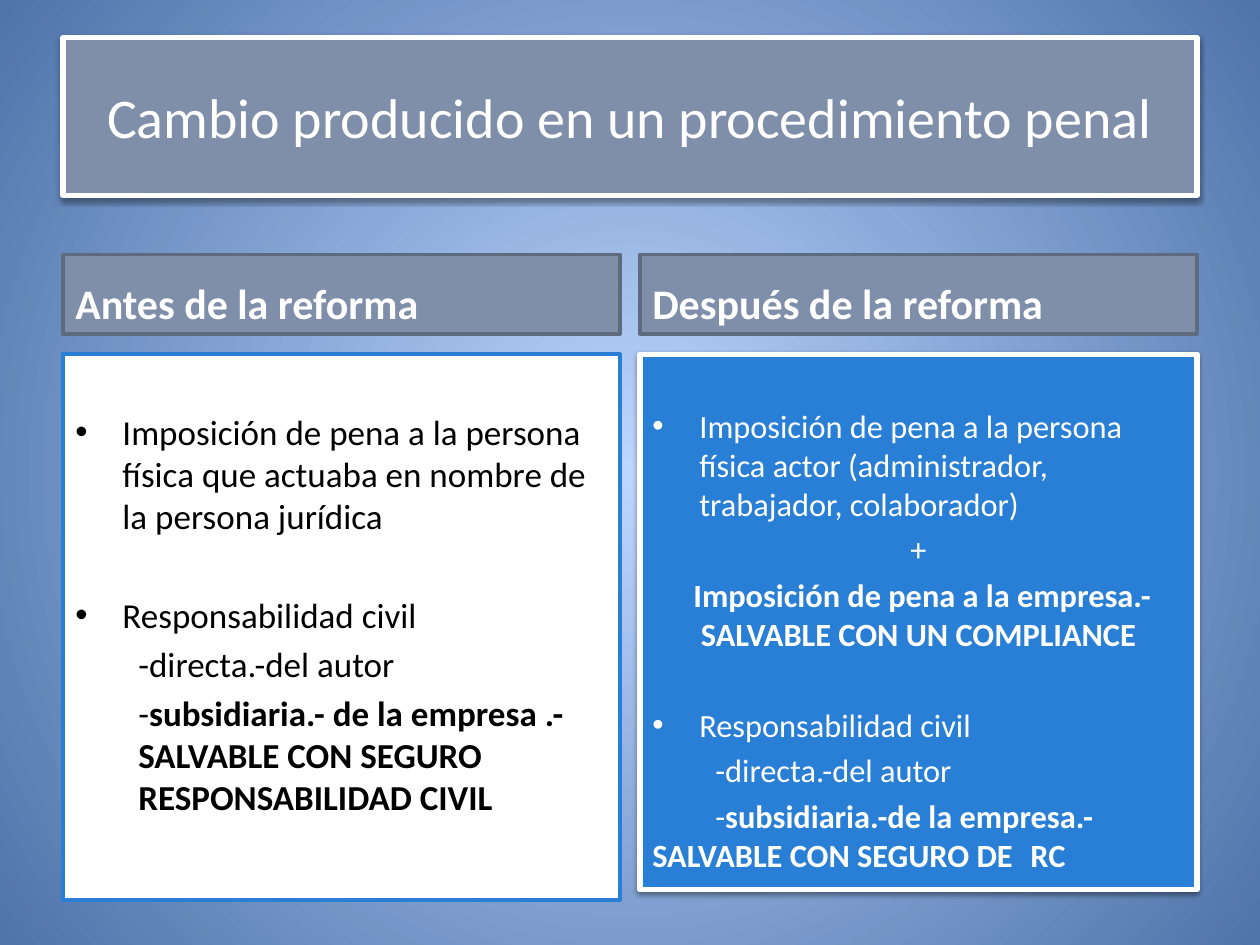
import pptx
import pptx.dml.color
import pptx.enum.shapes
import pptx.enum.text
import pptx.oxml
import pptx.oxml.ns
import pptx.oxml.xmlchemy
import pptx.util
from pptx.util import Cm, Pt

ALIGN = pptx.enum.text.PP_ALIGN
ANCHOR = pptx.enum.text.MSO_ANCHOR

WHITE, BLACK, SLATE, SLATE_EDGE, BLUE = "FFFFFF", "000000", "7F8FA9", "5E6A7D", "297FD5"
GLOW_CENTRE, GLOW_EDGE = "BCD6FF", "4F74AA"

TITLE = "Cambio producido en un procedimiento penal"

# Each paragraph: (style, [(text, bold), ...]); a "topic" is a bullet after a gap.
COLUMNS = [
    dict(
        heading="Antes de la reforma",
        look=dict(fill=WHITE, line=BLUE, width=2),
        text=dict(size=20, color=BLACK), height=11, top_inset=1.14,
        body=[
            ("first", [("Imposición de pena a la persona física que actuaba en nombre de la persona jurídica", False)]),
            ("topic", [("Responsabilidad civil", False)]),
            ("detail", [("-directa.-del autor", False)]),
            ("detail", [("-", False),
                        ("subsidiaria.- de la empresa .- SALVABLE CON SEGURO RESPONSABILIDAD CIVIL", True)]),
        ],
    ),
    dict(
        heading="Después de la reforma",
        look=dict(fill=BLUE, line=WHITE, width=3, shadow=True),
        text=dict(size=18.5, color=WHITE), height=10.8, top_inset=1.05,
        body=[
            ("first", [("Imposición de pena a la persona física actor (administrador, trabajador, colaborador)", False)]),
            ("centred", [("+", False)]),
            ("centred", [(" ", False), ("Imposición de pena a la empresa.- SALVABLE CON UN COMPLIANCE", True)]),
            ("topic", [("Responsabilidad civil", False)]),
            ("plain", [("\t-directa.-del autor", False)]),
            ("plain", [("\t-", False),
                       ("subsidiaria.-de la empresa.- \tSALVABLE CON SEGURO DE \tRC", True)]),
        ],
    ),
]

# Space before is a share of the text size; lengths are in cm.
STYLES = {
    "first": dict(before=0, left=0.95, hang=0.95, bullet=True),
    "topic": dict(before=1.62, left=0.95, hang=0.95, bullet=True),
    "detail": dict(before=0.2, left=1.27),
    "centred": dict(before=0.2, align=ALIGN.CENTER),
    "plain": dict(before=0.2),
}

MARGIN, CONTENT_WIDTH, GAP = 1.27, 22.86, 0.4
TITLE_TOP, TITLE_HEIGHT = 0.76, 3.18
HEADING_TOP, HEADING_HEIGHT = 5.13, 1.6
BODY_TOP = 7.14
COLUMN_WIDTH = (CONTENT_WIDTH - GAP) / 2


def rgb(value):
    return pptx.dml.color.RGBColor.from_string(value)


def add_child(parent, tag, **attributes):
    child = pptx.oxml.xmlchemy.OxmlElement(tag)
    for key, value in attributes.items():
        child.set(key, str(value))
    parent.append(child)
    return child


def paint(shape, fill, line, width, shadow=False):
    shape.fill.solid()
    shape.fill.fore_color.rgb = rgb(fill)
    shape.line.color.rgb = rgb(line)
    shape.line.width = Pt(width)
    shape.shadow.inherit = False
    if shadow:
        effects = shape.element.spPr.find(pptx.oxml.ns.qn("a:effectLst"))
        outer = add_child(effects, "a:outerShdw", blurRad=Pt(3.1), dist=Pt(1.6),
                          dir=90 * 60000, rotWithShape=0)
        add_child(add_child(outer, "a:srgbClr", val=BLACK), "a:alpha", val=38000)


def write(paragraph, runs, size, color, align=ALIGN.LEFT, before=0, left=0, hang=0, bullet=False):
    paragraph.alignment = align
    paragraph.space_before = Pt(round(before * size, 1))
    properties = paragraph._p.get_or_add_pPr()
    properties.set("marL", str(Cm(left)))
    properties.set("indent", str(Cm(-hang)))
    if bullet:
        add_child(properties, "a:buFont", typeface="Arial")
        add_child(properties, "a:buChar", char="•")
    else:
        add_child(properties, "a:buNone")
    for text, bold in runs:
        run = paragraph.add_run()
        run.text = text
        run.font.name = "Calibri"
        run.font.size = Pt(size)
        run.font.bold = bold
        run.font.color.rgb = rgb(color)


def add_panel(slide, left, top, height, anchor, **look):
    panel = slide.shapes.add_shape(pptx.enum.shapes.MSO_SHAPE.RECTANGLE,
                                   Cm(left), Cm(top), Cm(COLUMN_WIDTH), Cm(height))
    paint(panel, **look)
    panel.text_frame.word_wrap = True
    panel.text_frame.vertical_anchor = anchor
    return panel.text_frame


def set_radial_background(slide):
    fill = slide.background.fill
    fill.gradient()
    for stop, color in zip(fill.gradient_stops, (GLOW_CENTRE, GLOW_EDGE)):
        stop.color.rgb = rgb(color)
    gradient = slide.element.find(".//" + pptx.oxml.ns.qn("a:gradFill"))
    gradient.remove(gradient.find(pptx.oxml.ns.qn("a:lin")))
    circle = add_child(gradient, "a:path", path="circle")
    add_child(circle, "a:fillToRect", l=50000, t=50000, r=50000, b=50000)


def add_title(slide):
    title = slide.shapes.title
    title.left, title.top = Cm(MARGIN), Cm(TITLE_TOP)
    title.width, title.height = Cm(CONTENT_WIDTH), Cm(TITLE_HEIGHT)
    paint(title, SLATE, WHITE, 3, shadow=True)
    title.text_frame.vertical_anchor = ANCHOR.MIDDLE
    write(title.text_frame.paragraphs[0], [(TITLE, False)], 32, WHITE, align=ALIGN.CENTER)


def add_column(slide, left, column):
    heading = add_panel(slide, left, HEADING_TOP, HEADING_HEIGHT, ANCHOR.BOTTOM,
                        fill=SLATE, line=SLATE_EDGE, width=2)
    write(heading.paragraphs[0], [(column["heading"], True)], 24, WHITE)
    body = add_panel(slide, left, BODY_TOP, column["height"], ANCHOR.TOP, **column["look"])
    body.margin_top = Cm(column["top_inset"])
    for number, (style, runs) in enumerate(column["body"]):
        paragraph = body.add_paragraph() if number else body.paragraphs[0]
        write(paragraph, runs, **column["text"], **STYLES[style])


def main():
    deck = pptx.Presentation()
    deck.slide_width, deck.slide_height = Cm(25.4), Cm(19.05)
    slide = deck.slides.add_slide(deck.slide_layouts[5])
    set_radial_background(slide)
    add_title(slide)
    for number, column in enumerate(COLUMNS):
        add_column(slide, MARGIN + number * (COLUMN_WIDTH + GAP), column)
    deck.save("out.pptx")


if __name__ == "__main__":
    main()
